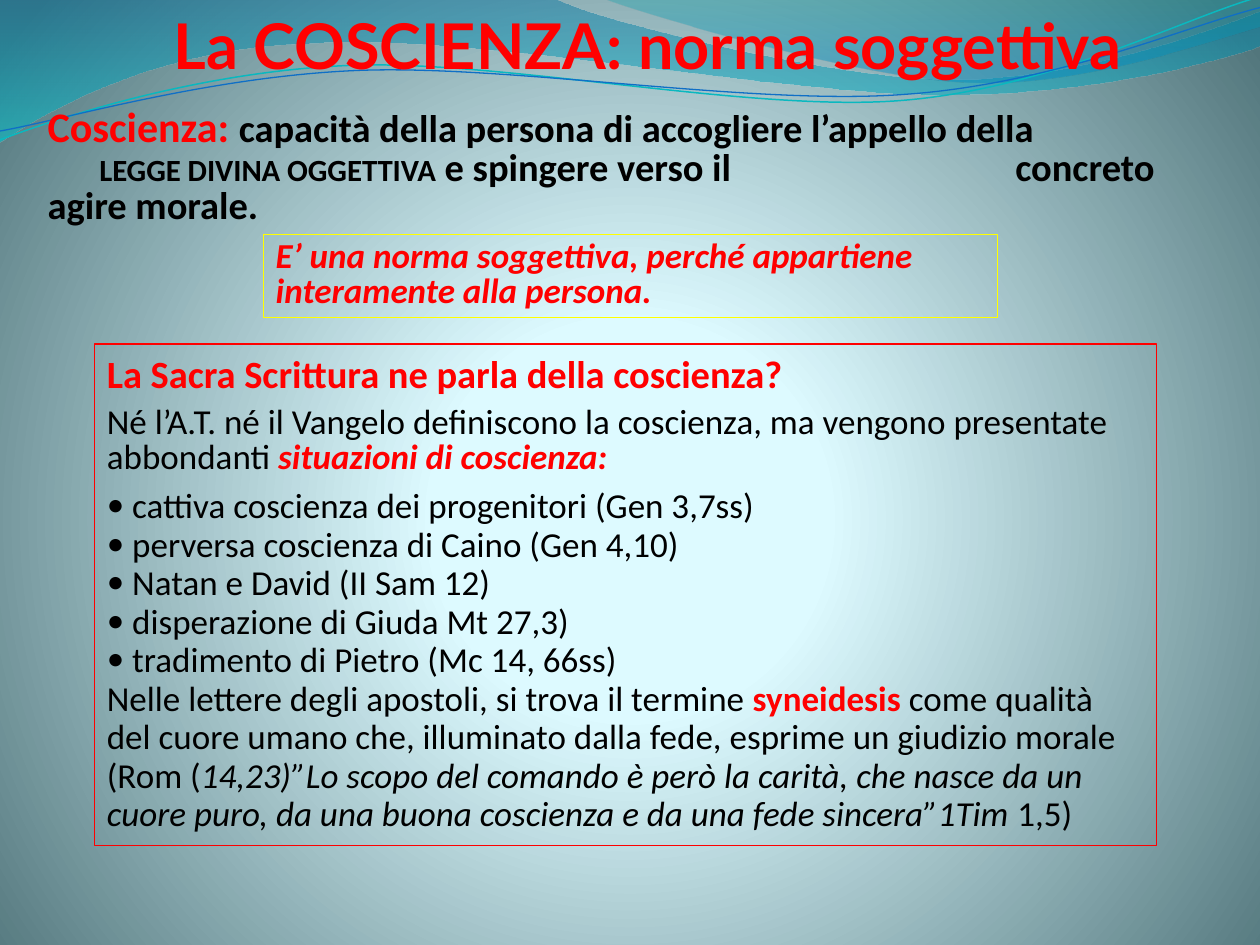
from dataclasses import dataclass

from lxml.etree import SubElement
from pptx import Presentation
from pptx.dml.color import RGBColor
from pptx.enum.shapes import MSO_SHAPE
from pptx.enum.text import MSO_ANCHOR, MSO_AUTO_SIZE, PP_ALIGN
from pptx.oxml import parse_xml
from pptx.oxml.ns import nsdecls, qn
from pptx.util import Inches, Pt

RED = RGBColor(0xFF, 0x00, 0x00)
BLACK = RGBColor(0x00, 0x00, 0x00)
YELLOW = RGBColor(0xFF, 0xFF, 0x00)
TEAL = RGBColor(0x0A, 0xB8, 0xBF)
BLUE = RGBColor(0x0F, 0x6F, 0xC6)
PALE = RGBColor(0xDE, 0xFB, 0xFF)
PALE_EDGE = RGBColor(0xDD, 0xFA, 0xFF)
SLATE = RGBColor(0x52, 0x76, 0x7C)
DEEP_BLUE = RGBColor(0x00, 0x74, 0xA1)
CYAN = RGBColor(0x00, 0xC6, 0xCF)
SEA = RGBColor(0x00, 0xA1, 0xA9)
AZURE = RGBColor(0x00, 0x8B, 0xBF)


@dataclass
class Stop:
    position: int
    color: RGBColor
    opacity: int = 100


@dataclass
class Span:
    text: str
    color: RGBColor = BLACK
    bold: bool = False
    italic: bool = False
    size: float | None = None
    small_caps: bool = False


@dataclass
class Para:
    spans: list[Span]
    size: float = 20
    font: str = "Calibri"
    leading: float | None = None
    after: float = 0
    align: PP_ALIGN = PP_ALIGN.LEFT
    bullet: bool = False
    tabs: tuple[float, ...] = ()


def set_gradient(fill, owner, stops: list[Stop], direction: str) -> None:
    fill.gradient()
    gradient = owner.find(".//" + qn("a:gradFill"))
    stop_xml = "".join(
        f'<a:gs pos="{s.position * 1000}"><a:srgbClr val="{s.color}">'
        f'<a:alpha val="{s.opacity * 1000}"/></a:srgbClr></a:gs>'
        for s in stops
    )
    gradient.getparent().replace(gradient, parse_xml(
        f'<a:gradFill {nsdecls("a")} rotWithShape="1">'
        f"<a:gsLst>{stop_xml}</a:gsLst>{direction}</a:gradFill>"
    ))


def add_outline(slide, start: tuple, segments: list[tuple], close: bool):
    builder = slide.shapes.build_freeform(Inches(start[0]), Inches(start[1]))
    anchors = [(Inches(s[-2]), Inches(s[-1])) for s in segments]
    builder.add_line_segments(anchors, close=close)
    outline = builder.convert_to_shape()
    outline.shadow.inherit = False
    edges = list(outline.element.iter(qn("a:lnTo")))
    for edge, segment in zip(edges, segments):
        if len(segment) == 2:
            continue
        curve = parse_xml(f'<a:cubicBezTo {nsdecls("a")}/>')
        for x, y in zip(segment[::2], segment[1::2]):
            SubElement(curve, qn("a:pt"), x=str(Inches(x) - outline.left), y=str(Inches(y) - outline.top))
        edge.getparent().replace(edge, curve)
    return outline


def add_wave(slide, start: tuple, segments: list[tuple], stops: list[Stop]) -> None:
    wave = add_outline(slide, start, segments, True)
    set_gradient(wave.fill, wave.element, stops, '<a:lin ang="5400000" scaled="1"/>')
    wave.line.fill.background()


def add_strand(slide, start: tuple, segments: list[tuple], color: RGBColor, width: float) -> None:
    strand = add_outline(slide, start, segments, False)
    strand.fill.background()
    strand.line.color.rgb = color
    strand.line.width = Pt(width)


def write_paragraph(paragraph, content: Para) -> None:
    paragraph.alignment = content.align
    paragraph.space_after = Pt(content.after)
    if content.leading:
        paragraph.line_spacing = Pt(content.leading)
    paragraph.font.name = content.font
    paragraph.font.size = Pt(content.size)
    properties = paragraph._p.get_or_add_pPr()
    defaults = properties.find(qn("a:defRPr"))
    if content.bullet:
        defaults.addprevious(parse_xml(f'<a:buFont {nsdecls("a")} typeface="{content.font}"/>'))
        defaults.addprevious(parse_xml(f'<a:buChar {nsdecls("a")} char="•"/>'))
    if content.tabs:
        tab_list = parse_xml(f'<a:tabLst {nsdecls("a")}/>')
        for position in content.tabs:
            SubElement(tab_list, qn("a:tab"), pos=str(Inches(position)), algn="l")
        defaults.addprevious(tab_list)
    for span in content.spans:
        if span.text == "\v":
            paragraph.add_line_break()
            continue
        run = paragraph.add_run()
        run.text = span.text
        run.font.color.rgb = span.color
        run.font.bold = span.bold
        run.font.italic = span.italic
        if span.size:
            run.font.size = Pt(span.size)
        if span.small_caps:
            run.font._element.set("cap", "small")


def add_text(slide, box: tuple, paragraphs: list[Para], border: RGBColor | None = None) -> None:
    bounds = [Inches(length) for length in box]
    if border is None:
        holder = slide.shapes.add_textbox(*bounds)
    else:
        holder = slide.shapes.add_shape(MSO_SHAPE.RECTANGLE, *bounds)
        holder.shadow.inherit = False
        holder.fill.background()
        holder.line.color.rgb = border
        holder.line.width = Pt(0.75)
    frame = holder.text_frame
    frame.word_wrap = True
    frame.auto_size = MSO_AUTO_SIZE.SHAPE_TO_FIT_TEXT
    frame.vertical_anchor = MSO_ANCHOR.TOP
    for index, content in enumerate(paragraphs):
        write_paragraph(frame.add_paragraph() if index else frame.paragraphs[0], content)


def main() -> None:
    deck = Presentation()
    deck.slide_width, deck.slide_height = Inches(10), Inches(7.5)
    slide = deck.slides.add_slide(deck.slide_layouts[6])
    set_gradient(
        slide.background.fill, slide.element,
        [Stop(0, PALE), Stop(25, PALE_EDGE), Stop(100, SLATE)],
        '<a:path path="circle"><a:fillToRect l="10000" t="110000" r="10000" b="100000"/></a:path>',
    )
    add_wave(slide, (0, 0), [
        (4.4, -0.01), (4.76, 0.17, 6.64, 0.63, 7.58, 0.63), (8.53, 0.63, 9.58, 0.26, 10, 0.09),
        (10.01, 0.36), (9.83, 0.44, 8.7, 0.76, 7.46, 0.75), (6.22, 0.75, 3.82, 0.28, 2.57, 0.34),
        (1.29, 0.36, 0.46, 0.83, -0.01, 1.13),
    ], [Stop(0, DEEP_BLUE, 45), Stop(100, CYAN, 55)])
    add_wave(slide, (4.79, -0.01), [
        (5.09, 0.11, 6.82, 0.62, 7.69, 0.65), (8.56, 0.69, 9.61, 0.32, 10, 0.21), (10, 0),
    ], [Stop(0, SEA, 30), Stop(80, AZURE, 45)])
    add_strand(slide, (0, 1.11), [
        (0.48, 0.93, 1.58, 0.57, 2.77, 0.52), (3.95, 0.47, 5.93, 0.89, 7.13, 0.8),
        (8.33, 0.71, 9.38, 0.15, 9.98, -0.02),
    ], TEAL, 0.85)
    add_strand(slide, (0, 1.04), [
        (0.47, 0.96, 1.64, 0.61, 2.83, 0.56), (4.03, 0.51, 5.97, 0.84, 7.17, 0.75),
        (8.36, 0.67, 9.41, 0.21, 10, 0.06),
    ], BLUE, 0.75)

    add_text(slide, (0, 0, 10.28, 0.71), [
        Para([Span("La COSCIENZA: norma soggettiva", RED, True)], 36, "Lato", align=PP_ALIGN.CENTER),
    ])
    add_text(slide, (0.28, 0.84, 9.45, 1.03), [Para([
        Span("Coscienza: ", RED, True, size=24),
        Span("capacità della persona di accogliere l’appello della", bold=True),
        Span("\v"),
        Span("\tlegge divina oggettiva", bold=True, small_caps=True),
        Span(" e spingere verso il\tconcreto agire morale.", bold=True),
    ], 22, leading=22, tabs=(0.41, 7.68))])
    add_text(slide, (2.09, 1.86, 5.83, 0.66), [Para([
        Span("E’ una norma soggettiva, perché appartiene interamente alla persona.", RED, True, True),
    ], leading=20)], YELLOW)

    examples = [
        "cattiva coscienza dei progenitori (Gen 3,7ss)",
        "perversa coscienza di Caino (Gen 4,10)",
        "Natan e David (II Sam 12)",
        "disperazione di Giuda Mt 27,3)",
        "tradimento di Pietro (Mc 14, 66ss)",
    ]
    add_text(slide, (0.75, 2.73, 8.43, 3.98), [
        Para([Span("La Sacra Scrittura ne parla della coscienza?", RED, True)], 22, after=6),
        Para([
            Span("Né l’A.T. né il Vangelo definiscono la coscienza, ma vengono presentate abbondanti "),
            Span("situazioni di coscienza:", RED, True, True),
        ], leading=20, after=6),
        *[Para([Span(f" {example}")], leading=22, bullet=True) for example in examples],
        Para([
            Span("Nelle lettere degli apostoli, si trova il termine "),
            Span("syneidesis ", RED, True),
            Span("come qualità del cuore umano che, illuminato dalla fede, esprime un giudizio morale (Rom ("),
            Span("14,23)”Lo scopo del comando è però la carità, che nasce da un cuore puro, "
                 "da una buona coscienza e da una fede sincera”1Tim", italic=True),
            Span(" 1,5)"),
        ], leading=22),
    ], RED)
    deck.save("out.pptx")


if __name__ == "__main__":
    main()
